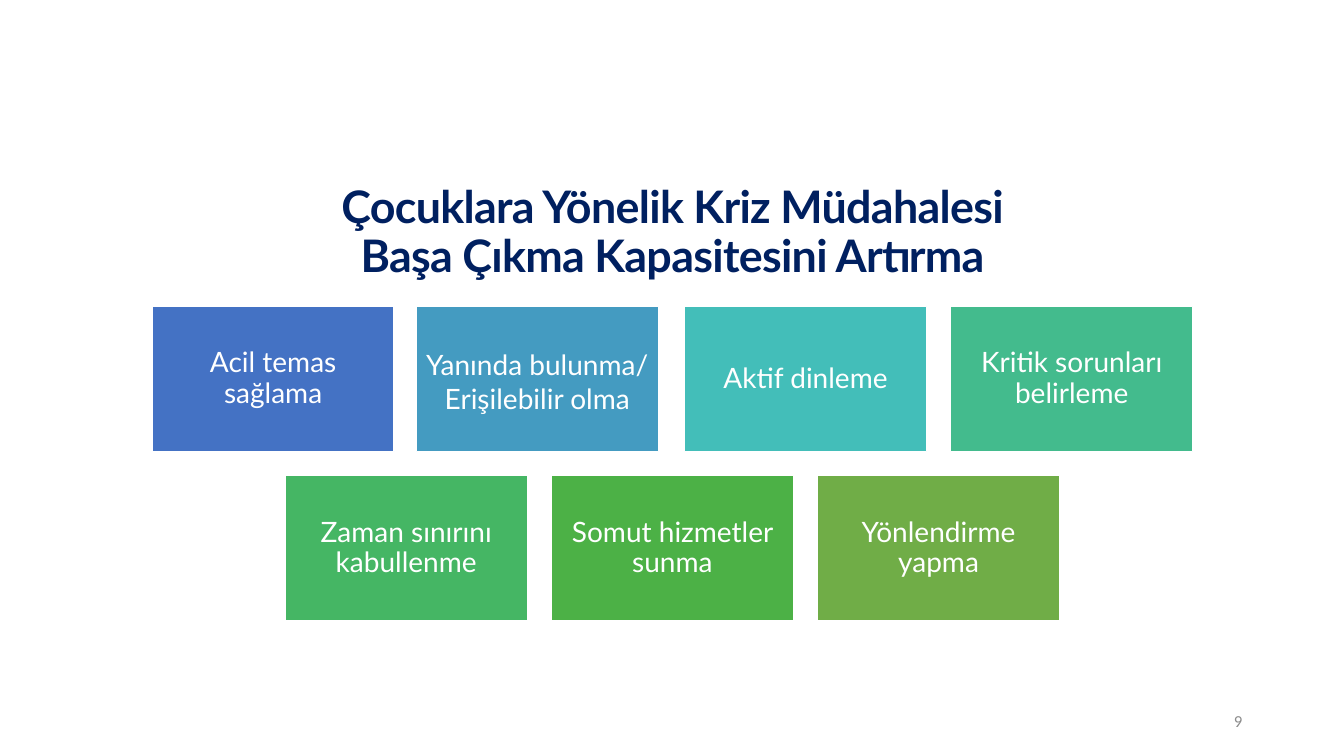
from pptx import Presentation
from pptx.dml.color import RGBColor
from pptx.enum.shapes import MSO_SHAPE
from pptx.enum.text import MSO_ANCHOR, PP_ALIGN
from pptx.util import Emu, Pt

SCALE = 9144  # EMU per px, 100 px to the inch


def px(n):
    return Emu(n * SCALE)


def color(code):
    return RGBColor.from_string(code)


class Deck:
    def __init__(self):
        self.prs = Presentation()
        self.prs.slide_width, self.prs.slide_height = px(1333), px(750)
        self.slide = self.prs.slides.add_slide(self.prs.slide_layouts[6])
        self.styles = {
            "title": dict(name="Lato", size=Pt(32), bold=True),
            "card": dict(name="Lato", size=Pt(20)),
            "page": dict(name="Calibri", size=Pt(12)),
        }
        self.inks = {"title": "002060", "card": "FFFFFF", "page": "8C8C8C"}

    def label(self, shape, lines, style, align=PP_ALIGN.CENTER, lead=0.9,
              pad=(10, 5), anchor=MSO_ANCHOR.MIDDLE, track=0):
        """Fill a shape with paragraphs; track is in hundredths of a point."""
        frame = shape.text_frame
        side, edge = map(px, pad)
        form = dict(word_wrap=True, vertical_anchor=anchor, margin_left=side,
                    margin_right=side, margin_top=edge, margin_bottom=edge)
        for key, value in form.items():
            setattr(frame, key, value)
        frame.text = "\n".join(lines)
        for para in frame.paragraphs:
            para.alignment, para.line_spacing = align, lead
            for run in para.runs:
                for key, value in self.styles[style].items():
                    setattr(run.font, key, value)
                run.font.color.rgb = color(self.inks[style])
                if track:
                    run.font._element.set("spc", str(track))

    def text(self, box, lines, style, **opts):
        shape = self.slide.shapes.add_textbox(*map(px, box))
        self.label(shape, lines, style, **opts)

    def card(self, box, fill, lines, **opts):
        shape = self.slide.shapes.add_shape(MSO_SHAPE.RECTANGLE, *map(px, box))
        shape.shadow.inherit = False
        shape.fill.solid()
        shape.fill.fore_color.rgb = color(fill)
        shape.line.color.rgb = color("FFFFFF")
        shape.line.width = Pt(1)
        self.label(shape, lines, "card", **{"pad": (8, 8), **opts})

    def save(self):
        self.prs.save("out.pptx")


WIDE, HIGH, STEP = 240, 144, 264
LOW = dict(lead=1.0, pad=(8, 41), anchor=MSO_ANCHOR.TOP)
# Each row: left, top, cards as (fill, lines, shift, text options)
ROWS = [
    (151, 304, [
        ("4472C4", ["Acil temas sağlama"], 0, {}),
        ("449BC1", ["Yanında bulunma/", "Erişilebilir olma"], -2, LOW),
        ("43BEB9", ["Aktif dinleme"], 0, {}),
        ("43BB8D", ["Kritik sorunları belirleme"], 0, {}),
    ]),
    (283, 472, [
        ("45B664", ["Zaman sınırını kabullenme"], 0, {}),
        ("4CB146", ["Somut hizmetler sunma"], 0, {}),
        ("70AD47", ["Yönlendirme yapma"], 0, {}),
    ]),
]


def main():
    deck = Deck()
    deck.text((92, 159, 1150, 145),
              ["Çocuklara Yönelik Kriz Müdahalesi",
               "Başa Çıkma Kapasitesini Artırma"], "title", track=-50)
    for left, top, cards in ROWS:
        for i, (fill, lines, shift, opts) in enumerate(cards):
            box = (left + i * STEP + shift, top, WIDE, HIGH)
            deck.card(box, fill, lines, **opts)
    deck.text((942, 695, 300, 40), ["9"], "page",
              align=PP_ALIGN.RIGHT, lead=1.0)
    deck.save()


if __name__ == "__main__":
    main()
